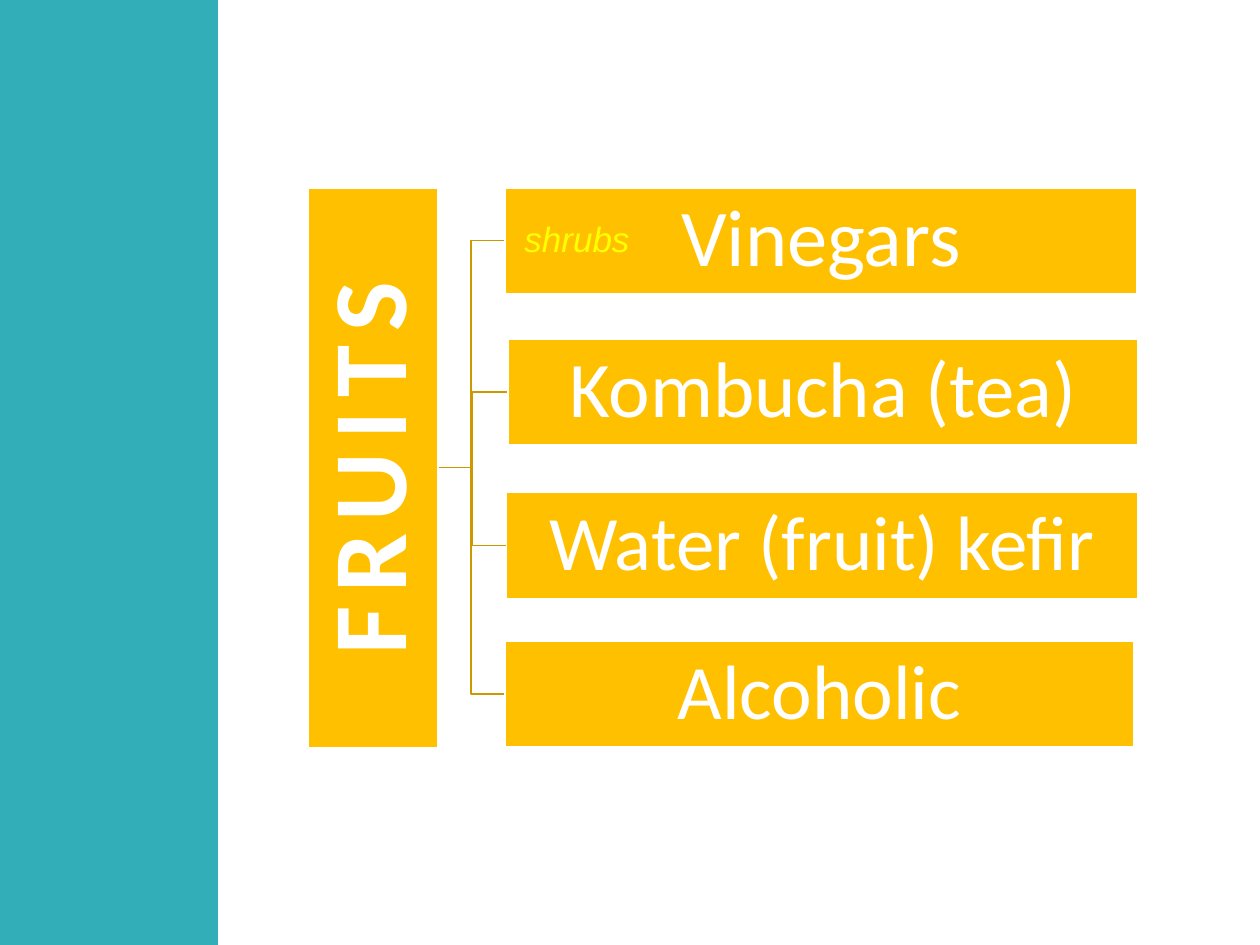
from dataclasses import dataclass
from pptx import Presentation
from pptx.dml.color import RGBColor
from pptx.enum.shapes import MSO_SHAPE as Shape
from pptx.enum.text import MSO_ANCHOR as Anchor, PP_ALIGN as Align
from pptx.util import Inches, Pt


@dataclass(frozen=True)
class Theme:
    teal: RGBColor = RGBColor.from_string("32AEB8")
    amber: RGBColor = RGBColor.from_string("FFC000")
    branch: RGBColor = RGBColor.from_string("CC9A00")
    white: RGBColor = RGBColor.from_string("FFFFFF")
    yellow: RGBColor = RGBColor.from_string("FFFF00")
    body_font: str = "Calibri"
    note_font: str = "Arial"
    title_size: int = 60
    note_size: int = 20
    line_width: int = 1


class SlideBuilder:
    def __init__(self, slide, theme):
        self.slide = slide
        self.theme = theme

    def add_text(self, frame, text, color, **font_values):
        paragraph = frame.paragraphs[0]
        paragraph.alignment = Align.CENTER
        run = paragraph.add_run()
        run.text = text
        run.font.color.rgb = color
        for name, value in font_values.items():
            setattr(run.font, name, value)
        return paragraph, run

    def panel(self, left, top, width, height, fill, line=None):
        shape = self.slide.shapes.add_shape(
            Shape.RECTANGLE, Inches(left), Inches(top), Inches(width), Inches(height))
        shape.shadow.inherit = False
        shape.fill.solid()
        shape.fill.fore_color.rgb = fill
        if line is None:
            shape.line.fill.background()
        else:
            shape.line.color.rgb = line
            shape.line.width = Pt(self.theme.line_width)
        return shape

    def box(self, text, bounds, size, inset=0.03, rotation=0, bold=False, spacing=0):
        theme = self.theme
        shape = self.panel(*bounds, theme.amber, theme.white)
        shape.rotation = rotation
        frame = shape.text_frame
        frame_values = {"word_wrap": True, "vertical_anchor": Anchor.MIDDLE}
        frame_values.update({f"margin_{side}": Inches(inset)
                             for side in ("left", "top", "right", "bottom")})
        for name, value in frame_values.items():
            setattr(frame, name, value)
        paragraph, run = self.add_text(frame, text, theme.white, name=theme.body_font,
                                       size=Pt(size), bold=bold)
        paragraph.line_spacing = 0.9
        if spacing:
            run.font._element.set("spc", str(spacing * 100))

    def elbow(self, start, end):
        middle = (start[0] + end[0]) / 2
        points = [(middle, start[1]), (middle, end[1]), end]
        builder = self.slide.shapes.build_freeform(Inches(start[0]), Inches(start[1]))
        builder.add_line_segments([(Inches(x), Inches(y)) for x, y in points], close=False)
        shape = builder.convert_to_shape()
        shape.shadow.inherit = False
        shape.fill.background()
        shape.line.color.rgb = self.theme.branch
        shape.line.width = Pt(self.theme.line_width)

    def note(self, text, left, top, width, height):
        theme = self.theme
        text_box = self.slide.shapes.add_textbox(
            Inches(left), Inches(top), Inches(width), Inches(height))
        text_box.text_frame.word_wrap = False
        self.add_text(text_box.text_frame, text, theme.yellow, name=theme.note_font,
                      size=Pt(theme.note_size), italic=True)


def main():
    presentation = Presentation()
    presentation.slide_width = Inches(10)
    presentation.slide_height = Inches(7.5)
    slide = presentation.slides.add_slide(presentation.slide_layouts[6])
    theme = Theme()
    builder = SlideBuilder(slide, theme)

    box_height = 0.84
    trunk = (3.47, 3.71)
    ferments = [
        ("Vinegars", 4.01, 1.49, 5.01, 46),
        ("Kombucha (tea)", 4.03, 2.69, 5, 45),
        ("Water (fruit) kefir", 4.02, 3.91, 5.01, 44),
        ("Alcoholic", 4.01, 5.09, 4.99, 44),
    ]

    builder.panel(0, 0, 1.73, 7.5, theme.teal)
    for _, left, top, _, _ in reversed(ferments):
        builder.elbow(trunk, (left, top + box_height / 2))
    builder.box("FRUITS", (0.74, 3.2, 4.44, 1.03), theme.title_size,
                inset=0.04, rotation=270, bold=True, spacing=8)
    for text, left, top, width, size in ferments:
        builder.box(text, (left, top, width, box_height), size)
    builder.note("shrubs", 4.06, 1.68, 1.04, 0.44)

    presentation.save("out.pptx")


if __name__ == "__main__":
    main()
